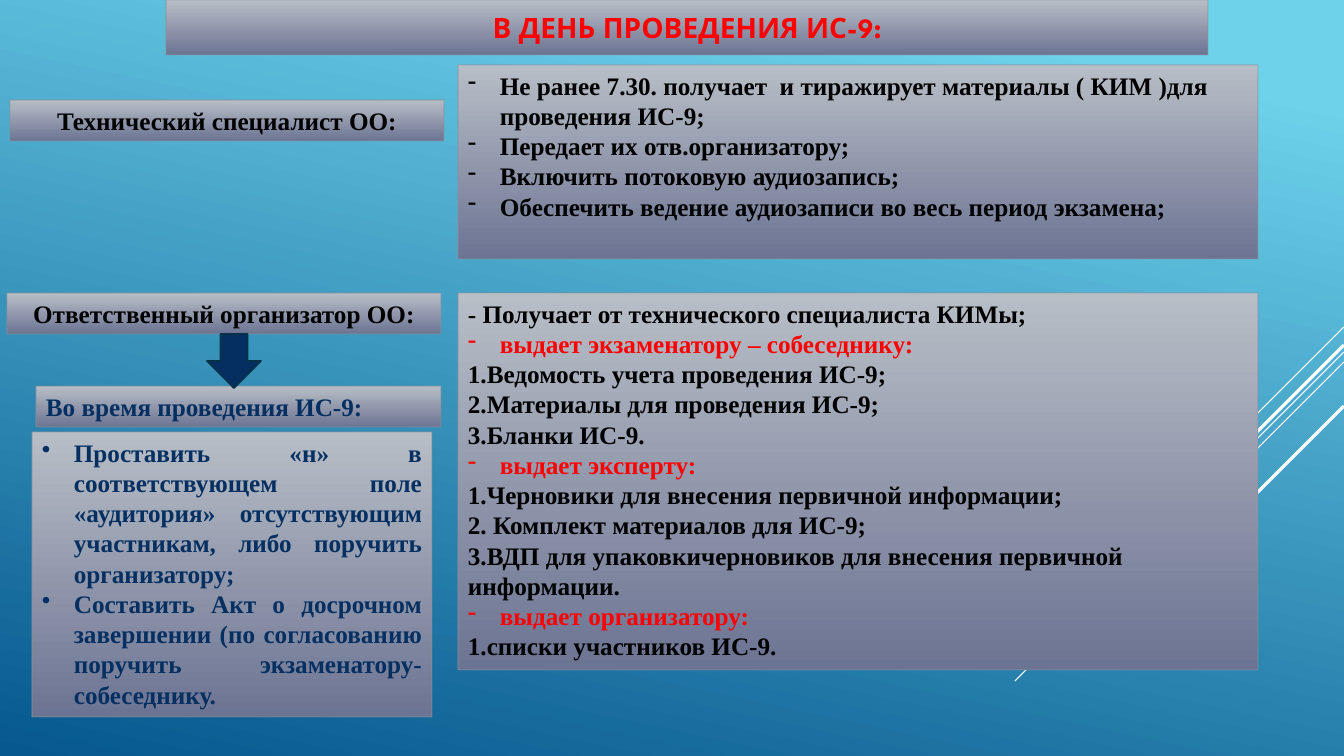
from dataclasses import dataclass

from lxml import etree
from pptx import Presentation
from pptx import util as u
from pptx.dml.color import RGBColor
from pptx.enum import shapes, text
from pptx.oxml.ns import qn

EMU_PER_PX = 914400 / 100.8
ALIGN = text.PP_ALIGN


@dataclass(frozen=True)
class Theme:
    """Colours, fonts and type sizes of the slide."""
    sky: tuple = ("6ED2EB", "06588E")
    panel: tuple = ("B8BEC6", "6C7493")
    border: str = "89919C"
    arrow_line: str = "043148"
    navy: str = "052F61"
    red: str = "FF0000"
    black: str = "000000"
    white: str = "FFFFFF"
    title_font: str = "League Spartan"
    body_font: str = "Times New Roman"
    title_size: int = 20
    body_size: int = 18


T = Theme()


def px(n):
    """Turn px into EMU."""
    return u.Emu(round(n * EMU_PER_PX))


def rgb(color):
    """Turn a hex string into a colour."""
    return RGBColor.from_string(color)


def set_gradient(fill, colors, start, angle):
    """Fill with two colours running clockwise by angle degrees."""
    fill.gradient()
    fill.gradient_angle = 360 - angle
    for stop, color, position in zip(fill.gradient_stops, colors, (start, 1)):
        stop.color.rgb = rgb(color)
        stop.position = position


def set_bullet(p, char, indent=32):
    """Give a paragraph a hanging bullet."""
    pPr = p._p.get_or_add_pPr()
    pPr.set("marL", str(px(indent)))
    pPr.set("indent", str(-px(indent)))
    etree.SubElement(pPr, qn("a:buChar")).set("char", char)


def add_text(tf, content, first=False, color=T.black, font=T.body_font,
             size=T.body_size, align=ALIGN.LEFT, bullet=None):
    """Write one bold paragraph into a text frame."""
    p = tf.paragraphs[0] if first else tf.add_paragraph()
    p.alignment = align
    if bullet:
        set_bullet(p, bullet)
    r = p.add_run()
    r.text = content
    r.font.name, r.font.size, r.font.bold = font, u.Pt(size), True
    r.font.color.rgb = rgb(color)


def add_panel(s, box, lines, anchor=text.MSO_ANCHOR.TOP, **style):
    """Place a shaded panel with lines of (text, format)."""
    sp = s.shapes.add_shape(shapes.MSO_SHAPE.RECTANGLE, *map(px, box))
    sp.shadow.inherit = False
    set_gradient(sp.fill, T.panel, 0, 90)
    sp.line.color.rgb = rgb(T.border)
    sp.line.width = u.Pt(0.75)
    color = sp.line._ln.find(".//" + qn("a:srgbClr"))
    etree.SubElement(color, qn("a:alpha")).set("val", "60000")
    tf = sp.text_frame
    tf.word_wrap = True
    tf.vertical_anchor = anchor
    for i, (content, extra) in enumerate(lines):
        add_text(tf, content, first=i == 0, **{**style, **extra})
    return sp


def add_backdrop(s, right):
    """Paint the sky and the diagonal rays that start at the right edge."""
    set_gradient(s.background.fill, T.sky, 0.1, 102)
    rays = [(327, 101, 0.75), (352, 329, 0.75), (362, 209, 0.75),
            (345, 193, 2.25), (406, 140, 2.25)]
    for y, run, width in rays:
        ray = s.shapes.add_connector(shapes.MSO_CONNECTOR.STRAIGHT, px(right), px(y),
                                     px(right - run), px(y + run))
        ray.line.color.rgb = rgb(T.white)
        ray.line.width = u.Pt(width)
        etree.SubElement(ray._element.spPr, qn("a:effectLst"))


def add_title(s, x, y, w, h):
    """Place the title bar."""
    add_panel(s, (x, y, w, h), [("В ДЕНЬ ПРОВЕДЕНИЯ ИС-9:", {})], text.MSO_ANCHOR.MIDDLE,
              color=T.red, font=T.title_font, size=T.title_size, align=ALIGN.CENTER)


def add_specialist(s, x, y, w, h):
    """Place the technical specialist's label and duties."""
    add_panel(s, (x, y + 35, 434, 41), [("Технический специалист ОО:", {})],
              align=ALIGN.CENTER)
    duties = ["Не ранее 7.30. получает  и тиражирует материалы ( КИМ )для проведения ИС-9;",
              "Передает их отв.организатору;",
              "Включить потоковую аудиозапись;",
              "Обеспечить ведение аудиозаписи во весь период экзамена;"]
    add_panel(s, (x + w - 800, y, 800, h), [(d, {}) for d in duties], bullet="-")


def add_organizer_steps(s, x, y, w, h):
    """Place the organizer's label, the arrow and the steps during the exam."""
    add_panel(s, (x, y, w, 41), [("Ответственный организатор ОО:", {})],
              align=ALIGN.CENTER)
    add_panel(s, (x + 29, y + 93, w - 29, 41), [("Во время проведения ИС-9:", {})],
              color=T.navy)
    arrow = s.shapes.add_shape(shapes.MSO_SHAPE.DOWN_ARROW,
                               *map(px, (x + 200, y + 41, 54, 54)))
    arrow.shadow.inherit = False
    arrow.fill.solid()
    arrow.fill.fore_color.rgb = rgb(T.navy)
    arrow.line.color.rgb = rgb(T.arrow_line)
    arrow.line.width = u.Pt(1.25)
    steps = ["Проставить «н» в соответствующем поле «аудитория» отсутствующим участникам, "
             "либо поручить организатору;",
             "Составить Акт о досрочном завершении (по согласованию поручить "
             "экзаменатору-собеседнику."]
    add_panel(s, (x + 25, y + 139, 400, h - 139), [(step, {}) for step in steps],
              color=T.navy, align=ALIGN.JUSTIFY, bullet="•")


def add_handouts(s, x, y, w, h):
    """Place the list of what the organizer hands out and to whom."""
    handouts = {
        "выдает экзаменатору – собеседнику:": [
            "1.Ведомость учета проведения ИС-9;",
            "2.Материалы для проведения ИС-9;",
            "3.Бланки ИС-9."],
        "выдает эксперту:": [
            "1.Черновики для внесения первичной информации;",
            "2. Комплект материалов для ИС-9;",
            "3.ВДП для упаковкичерновиков для внесения первичной информации."],
        "выдает организатору:": ["1.списки участников ИС-9."],
    }
    lines = [("- Получает от технического специалиста КИМы;", {})]
    for recipient, items in handouts.items():
        lines.append((recipient, {"color": T.red, "bullet": "-"}))
        lines += [(item, {}) for item in items]
    add_panel(s, (x, y, w, h), lines)


def main():
    """Build and save the slide."""
    prs = Presentation()
    prs.slide_width, prs.slide_height = px(1344), px(756)
    s = prs.slides.add_slide(prs.slide_layouts[6])
    add_backdrop(s, 1344)
    add_title(s, 166, 0, 1042, 55)
    add_specialist(s, 10, 65, 1248, 194)
    add_organizer_steps(s, 7, 293, 434, 424)
    add_handouts(s, 458, 293, 800, 377)
    prs.save("out.pptx")


if __name__ == "__main__":
    main()
